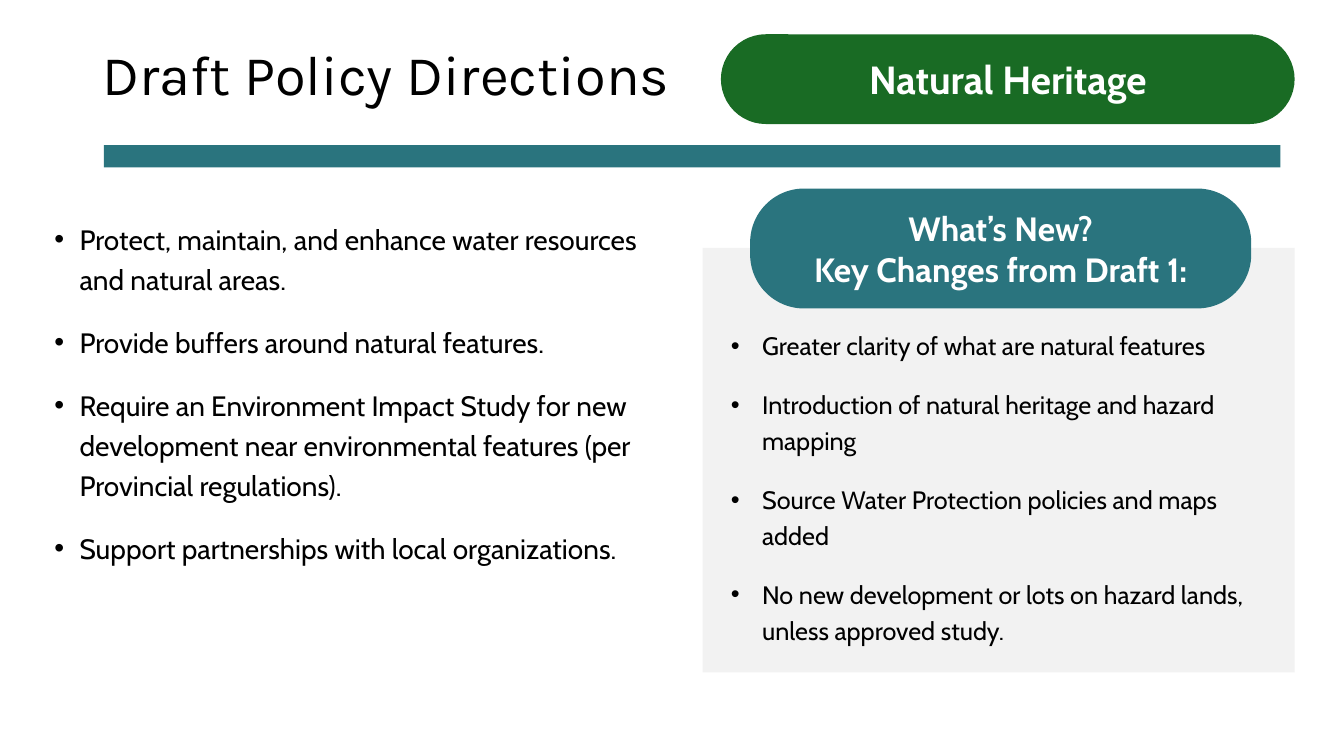
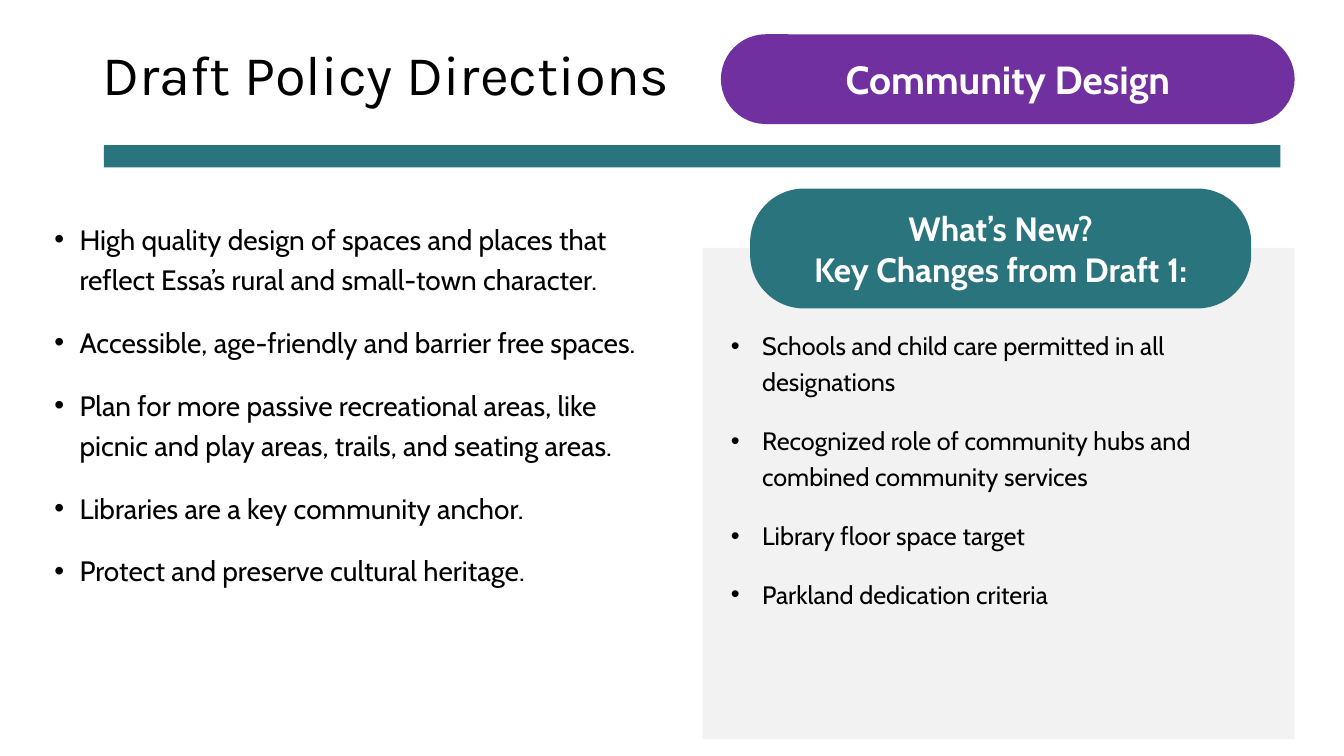
"""Build two policy direction slides, each with a topic pill, policy bullets and a panel of key changes."""
from dataclasses import dataclass

from lxml import etree
from pptx import Presentation, util as u
from pptx.dml.color import RGBColor
from pptx.enum import shapes, text
from pptx.oxml.ns import qn

TITLE = "Draft Policy Directions"
CHANGES_HEADING = ["What’s New?", "Key Changes from Draft 1:"]

SLIDES = [
    {
        "topic": "Natural Heritage",
        "colour": "196B24",
        "panel_height": 421,
        "changes_height": 330,
        "policies": [
            "Protect, maintain, and enhance water resources and natural areas.",
            "Provide buffers around natural features.",
            "Require an Environment Impact Study for new development near "
            "environmental features (per Provincial regulations).",
            "Support partnerships with local organizations.",
        ],
        "changes": [
            "Greater clarity of what are natural features",
            "Introduction of natural heritage and hazard mapping",
            "Source Water Protection policies and maps added",
            "No new development or lots on hazard lands, unless approved study.",
        ],
    },
    {
        "topic": "Community Design",
        "colour": "7030A0",
        "panel_height": 487,
        "changes_height": 293,
        "policies": [
            "High quality design of spaces and places that reflect Essa’s rural "
            "and small-town character.",
            "Accessible, age-friendly and barrier free spaces.",
            "Plan for more passive recreational areas, like picnic and play areas, "
            "trails, and seating areas.",
            "Libraries are a key community anchor.",
            "Protect and preserve cultural heritage.",
        ],
        "changes": [
            "Schools and child care permitted in all designations",
            "Recognized role of community hubs and combined community services",
            "Library floor space target",
            "Parkland dedication criteria",
        ],
    },
]


@dataclass(frozen=True)
class Theme:
    ink: str = "000000"
    white: str = "FFFFFF"
    teal: str = "2A747E"
    panel: str = "F2F2F2"
    title_font: str = "Karla"
    body_font: str = "Cabin"
    title: int = 40
    topic: int = 28
    heading: int = 24
    policies: int = 20
    changes: int = 18


THEME = Theme()
RECT = shapes.MSO_SHAPE.RECTANGLE
PILL = shapes.MSO_SHAPE.ROUNDED_RECTANGLE
EMU_PER_PX = 9144


def px(*lengths):
    return [u.Emu(n * EMU_PER_PX) for n in lengths]


def write(sp, lines, size, colour, font=THEME.body_font, bold=False, align=None, line_spacing=None):
    tf = sp.text_frame
    tf.word_wrap = True
    tf.text = "\n".join(lines)
    for p in tf.paragraphs:
        p.alignment = align
        p.line_spacing = line_spacing
        for r in p.runs:
            r.font.name, r.font.size, r.font.bold = font, u.Pt(size), bold
            r.font.color.rgb = RGBColor.from_string(colour)
    return tf


def add_block(s, kind, box, fill, radius=None):
    sp = s.shapes.add_shape(kind, *px(*box))
    sp.shadow.inherit = False
    sp.fill.solid()
    sp.fill.fore_color.rgb = RGBColor.from_string(fill)
    sp.line.fill.background()
    if radius is not None:
        sp.adjustments[0] = radius
    return sp


def add_pill(s, box, fill, radius, lines, size):
    sp = add_block(s, PILL, box, fill, radius)
    tf = write(sp, lines, size, THEME.white, bold=True, align=text.PP_ALIGN.CENTER)
    tf.vertical_anchor = text.MSO_ANCHOR.MIDDLE


def add_bullets(s, box, items, size, indent):
    sp = s.shapes.add_textbox(*px(*box))
    tf = write(sp, items, size, THEME.ink, line_spacing=1.2)
    for i, p in enumerate(tf.paragraphs):
        p.space_before, p.space_after = u.Pt(10 if i else 0), u.Pt(6)
        pPr = p._p.get_or_add_pPr()
        hang = px(indent)[0]
        pPr.set("marL", str(hang))
        pPr.set("indent", str(-hang))
        etree.SubElement(pPr, qn("a:buFont")).set("typeface", "Arial")
        etree.SubElement(pPr, qn("a:buChar")).set("char", "•")


def add_title(s):
    sp = s.shapes.add_textbox(*px(92, 40, 1150, 73))
    tf = write(sp, [TITLE], THEME.title, THEME.ink, THEME.title_font, line_spacing=0.9)
    tf.vertical_anchor = text.MSO_ANCHOR.MIDDLE


def add_slide(prs, content):
    s = prs.slides.add_slide(prs.slide_layouts[6])
    add_block(s, RECT, (697, 246, 587, content["panel_height"]), THEME.panel)
    add_title(s)
    add_block(s, RECT, (103, 144, 1167, 22), THEME.teal)
    add_pill(s, (715, 34, 569, 89), content["colour"], 0.5, [content["topic"]], THEME.topic)
    add_pill(s, (744, 187, 497, 119), THEME.teal, 0.45, CHANGES_HEADING, THEME.heading)
    add_bullets(s, (715, 317, 541, content["changes_height"]), content["changes"], THEME.changes, 31)
    add_bullets(s, (44, 209, 622, 524), content["policies"], THEME.policies, 25)


def main():
    prs = Presentation()
    prs.slide_width, prs.slide_height = px(1333, 750)
    for content in SLIDES:
        add_slide(prs, content)
    prs.save("out.pptx")


if __name__ == "__main__":
    main()
